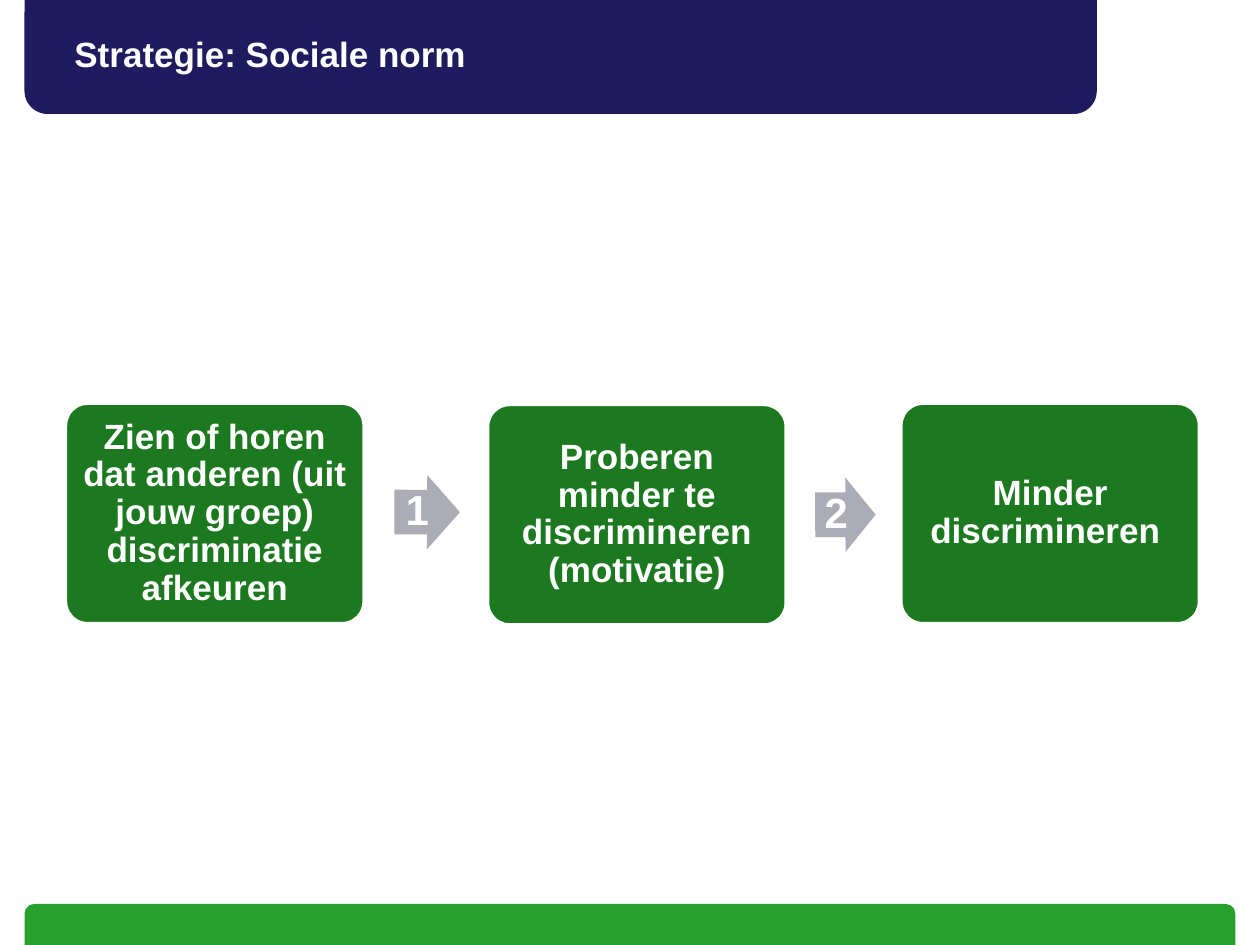
import pptx
import pptx.util
import pptx.dml.color
import pptx.enum.shapes
import pptx.enum.text

# Grid of 100 columns by 75 rows on the slide
WIDE, HIGH = pptx.util.Inches(10), pptx.util.Inches(7.5)
COLS, ROWS = 100, 75
KIND = pptx.enum.shapes.MSO_SHAPE
ANCHOR = pptx.enum.text.MSO_ANCHOR
ALIGN = pptx.enum.text.PP_ALIGN

NAVY, LIME, GREEN, GREY, WHITE = "201A5F", "27A12B", "1D7920", "ACACB6", "FFFFFF"


def tint(code):
    return pptx.dml.color.RGBColor.from_string(code)


def place(col, row, cols, rows):
    return (round(col * WIDE / COLS), round(row * HIGH / ROWS),
            round(cols * WIDE / COLS), round(rows * HIGH / ROWS))


def write(shape, text, size, inset=0, align=ALIGN.CENTER, space=0.9):
    frame = shape.text_frame
    frame.word_wrap = True
    frame.auto_size = pptx.enum.text.MSO_AUTO_SIZE.NONE
    frame.vertical_anchor = ANCHOR.MIDDLE
    frame.margin_left = frame.margin_right = pptx.util.Inches(inset)
    frame.margin_top = frame.margin_bottom = pptx.util.Inches(inset)
    frame.text = text
    para = frame.paragraphs[0]
    para.alignment = align
    para.line_spacing = space
    para.font.name = "Arial"
    para.font.size = pptx.util.Pt(size)
    para.font.bold = True
    para.font.color.rgb = tint(WHITE)


def draw(slide, kind, spot, fill, adjust, line=None, weight=0.75):
    shape = slide.shapes.add_shape(kind, *place(*spot))
    shape.shadow.inherit = False
    for i, value in enumerate(adjust):
        shape.adjustments[i] = value
    shape.fill.solid()
    shape.fill.fore_color.rgb = tint(fill)
    if line:
        shape.line.color.rgb = tint(line)
        shape.line.width = pptx.util.Pt(weight)
    else:
        shape.line.fill.background()
    return shape


def bar(slide, spot, fill):
    draw(slide, KIND.ROUNDED_RECTANGLE, spot, fill, [0.167], fill)


def head(slide, text):
    title = slide.shapes.title
    title.left, title.top, title.width, title.height = place(5.9, 2.3, 79.1, 3.9)
    write(title, text, 20, align=ALIGN.LEFT, space=1)
    # Bring the title in front of the bar
    slide.shapes._spTree.append(title._element)


def step(slide, col, row, text):
    box = draw(slide, KIND.ROUNDED_RECTANGLE, (col, row, 23.7, 17.5),
               GREEN, [0.1], WHITE, 2)
    write(box, text, 20, inset=0.08)


def arrow(slide, col, row, cols, turn, text):
    shape = draw(slide, KIND.RIGHT_ARROW, (col, row, cols, 5.9), GREY, [0.6, 0.5])
    shape.rotation = turn
    write(shape, text, 24)


def main():
    deck = pptx.Presentation()
    deck.slide_width, deck.slide_height = WIDE, HIGH
    slide = deck.slides.add_slide(deck.slide_layouts[5])

    # Bars that run past the bottom and top edges
    bar(slide, (2, 71.8, 96, 4.3), LIME)
    bar(slide, (2, -1.7, 85, 10.7), NAVY)
    head(slide, "Strategie: Sociale norm")

    # Three steps, linked by numbered arrows
    step(slide, 5.2, 32, "Zien of horen dat anderen (uit jouw groep) discriminatie afkeuren")
    arrow(slide, 31.3, 37.7, 5.2, 0.2, "1")
    step(slide, 38.7, 32.1, "Proberen minder te discrimineren (motivatie)")
    arrow(slide, 64.7, 37.9, 4.8, 359.8, "2")
    step(slide, 71.5, 32, "Minder discrimineren ")

    deck.save("out.pptx")


if __name__ == "__main__":
    main()
